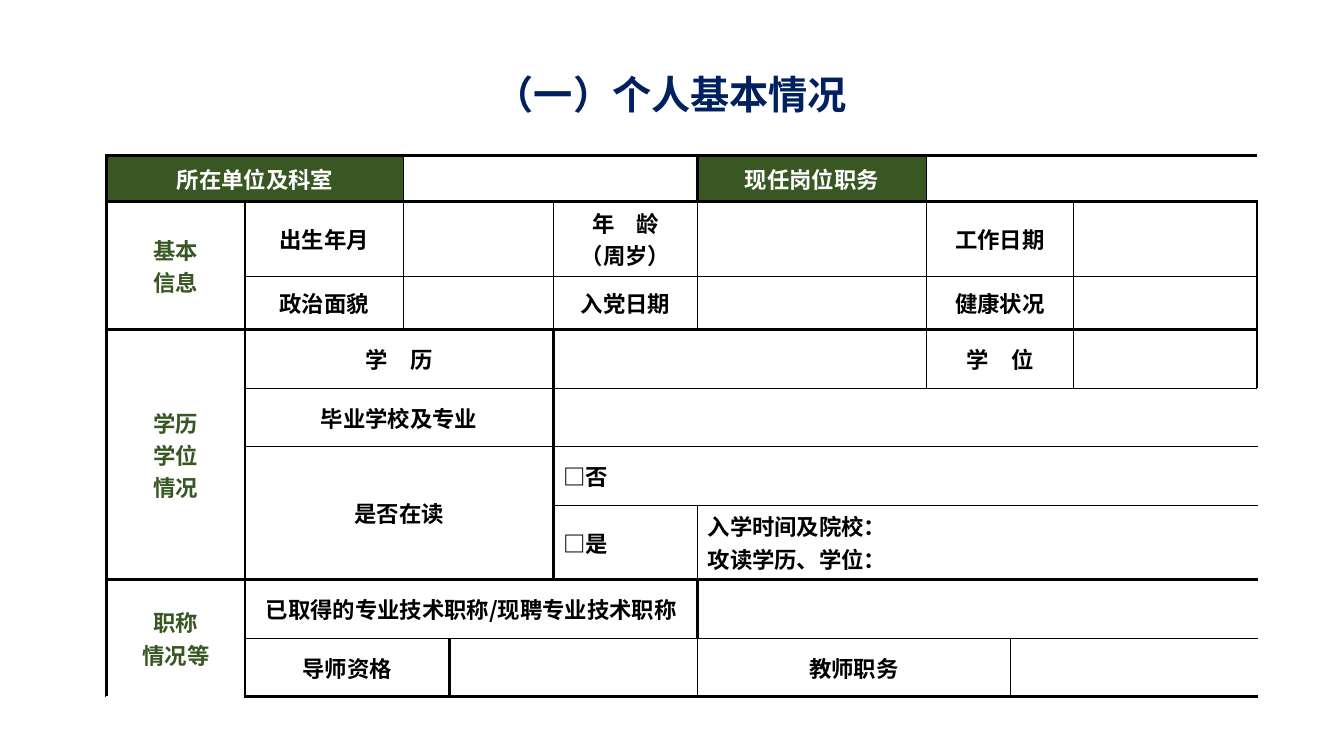
from dataclasses import dataclass
from itertools import accumulate, product

from lxml.etree import SubElement
from pptx import Presentation
from pptx.dml.color import RGBColor
from pptx.enum.text import MSO_ANCHOR, PP_ALIGN
from pptx.oxml.ns import qn
from pptx.table import Table, _Cell
from pptx.text.text import TextFrame
from pptx.util import Emu, Pt

EMU_PER_PX = 9144  # 100 px to the inch


@dataclass(frozen=True)
class Theme:
    font: str = "Noto Sans CJK SC"
    navy: str = "002060"
    green: str = "385723"
    white: str = "FFFFFF"
    black: str = "000000"
    title_size: int = 28
    table_size: int = 16
    thick: float = 2.25
    medium: float = 1
    hairline: float = 0.5


THEME = Theme()


@dataclass(frozen=True)
class Style:
    color: str
    fill: str = THEME.white
    align: PP_ALIGN = PP_ALIGN.CENTER


HEADER = Style(THEME.white, THEME.green)
SECTION = Style(THEME.green)
LABEL = Style(THEME.black)
ANSWER = Style(THEME.black, align=PP_ALIGN.LEFT)


@dataclass(frozen=True)
class Block:
    """A form field, merged over one or more grid cells."""
    columns: int
    text: str = ""
    style: Style = LABEL
    rows: int = 1


# Fields of each row, left to right; cells taken from above are skipped
FORM_ROWS = [
    [Block(2, "所在单位及科室", HEADER), Block(3), Block(1, "现任岗位职务", HEADER), Block(3)],
    [Block(1, "基本\n信息", SECTION, 2), Block(1, "出生年月"), Block(2),
     Block(1, "年　龄\n（周岁）"), Block(1), Block(2, "工作日期"), Block(1)],
    [Block(1, "政治面貌"), Block(2), Block(1, "入党日期"), Block(1),
     Block(2, "健康状况"), Block(1)],
    [Block(1, "学历\n学位\n情况", SECTION, 4), Block(3, "学　历"), Block(2),
     Block(2, "学　位"), Block(1)],
    [Block(3, "毕业学校及专业"), Block(5)],
    [Block(3, "是否在读", rows=2), Block(5, "□否", ANSWER)],
    [Block(1, "□是", ANSWER), Block(4, "入学时间及院校：\n攻读学历、学位：", ANSWER)],
    [Block(1, "职称\n情况等", SECTION, 2),
     Block(4, "已取得的专业技术职称/现聘专业技术职称"), Block(4)],
    [Block(2, "导师资格"), Block(2), Block(2, "教师职务"), Block(2)],
]
COLUMN_WIDTHS = [137, 157, 46, 103, 143, 227, 83, 63, 182]
ROW_HEIGHTS = [46, 58, 53] + [58] * 6
SECTION_EDGES = {0, 1, 3, 7, 9}
STUDY_EDGES = {5, 6}


def px(length: int) -> Emu:
    return Emu(length * EMU_PER_PX)


def write_text(frame: TextFrame, text: str, *, size: int, color: str,
               align: PP_ALIGN = PP_ALIGN.CENTER) -> None:
    for index, line in enumerate(text.split("\n")):
        paragraph = frame.paragraphs[0] if index == 0 else frame.add_paragraph()
        paragraph.alignment = align
        if not line:  # an empty field keeps the table's type size
            SubElement(paragraph._p, qn("a:endParaRPr"), sz=str(size * 100))
            continue
        run = paragraph.add_run()
        run.text = line
        run.font.name = THEME.font
        run.font.size = Pt(size)
        run.font.bold = True
        run.font.color.rgb = RGBColor.from_string(color)
        SubElement(run._r.get_or_add_rPr(), qn("a:ea"), typeface=THEME.font)


def horizontal_weight(edge: int) -> float:
    if edge in SECTION_EDGES:
        return THEME.thick
    return THEME.hairline if edge in STUDY_EDGES else THEME.medium


def vertical_weight(edge: int, row: int) -> float:
    if edge in (0, len(COLUMN_WIDTHS)) or edge == (5 if row == 0 else 1):
        return THEME.thick
    return THEME.hairline if (row, edge) == (6, 5) else THEME.medium


def draw_borders(cell: _Cell, weights: dict[str, float]) -> None:
    properties = cell._tc.get_or_add_tcPr()
    for side, weight in weights.items():
        line = SubElement(properties, qn(f"a:ln{side}"), w=str(Pt(weight)))
        fill = SubElement(line, qn("a:solidFill"))
        SubElement(fill, qn("a:srgbClr"), val=THEME.black)


def draw_block(table: Table, block: Block, top: int, left: int) -> None:
    bottom, right = top + block.rows, left + block.columns
    for row, column in product(range(top, bottom), range(left, right)):
        # Only the outer edges of a merged field carry a line
        weights = {}
        if column == left:
            weights["L"] = vertical_weight(left, row)
        if column + 1 == right:
            weights["R"] = vertical_weight(right, row)
        if row == top:
            weights["T"] = horizontal_weight(top)
        if row + 1 == bottom:
            weights["B"] = horizontal_weight(bottom)
        cell = table.cell(row, column)
        draw_borders(cell, weights)
        cell.fill.solid()
        cell.fill.fore_color.rgb = RGBColor.from_string(block.style.fill)
    field = table.cell(top, left)
    if block.rows * block.columns > 1:
        field.merge(table.cell(bottom - 1, right - 1))
    field.vertical_anchor = MSO_ANCHOR.MIDDLE
    write_text(field.text_frame, block.text, size=THEME.table_size,
               color=block.style.color, align=block.style.align)


def draw_form(table: Table) -> None:
    table.first_row = False
    table.horz_banding = False
    for column, width in zip(table.columns, COLUMN_WIDTHS):
        column.width = px(width)
    for row, height in zip(table.rows, ROW_HEIGHTS):
        row.height = px(height)
    for top, blocks in enumerate(FORM_ROWS):
        # Fields fill the row up to its right edge
        start = len(COLUMN_WIDTHS) - sum(block.columns for block in blocks)
        if top == 6:  # the study question spans columns 1 to 3 from above
            start = 4
        lefts = accumulate((block.columns for block in blocks), initial=start)
        for block, left in zip(blocks, lefts):
            draw_block(table, block, top, left)


def main() -> None:
    presentation = Presentation()
    presentation.slide_width = px(1333)
    presentation.slide_height = px(750)
    slide = presentation.slides.add_slide(presentation.slide_layouts.get_by_name("Title Only"))

    # Title
    title = slide.shapes.title
    title.left, title.top, title.width, title.height = map(px, (135, 36, 1061, 85))
    title.text_frame.vertical_anchor = MSO_ANCHOR.BOTTOM
    write_text(title.text_frame, "（一）个人基本情况", size=THEME.title_size, color=THEME.navy)

    # Personal details form
    frame = slide.shapes.add_table(len(ROW_HEIGHTS), len(COLUMN_WIDTHS), px(106), px(154),
                                   px(sum(COLUMN_WIDTHS)), px(sum(ROW_HEIGHTS)))
    draw_form(frame.table)

    presentation.save("out.pptx")


if __name__ == "__main__":
    main()
